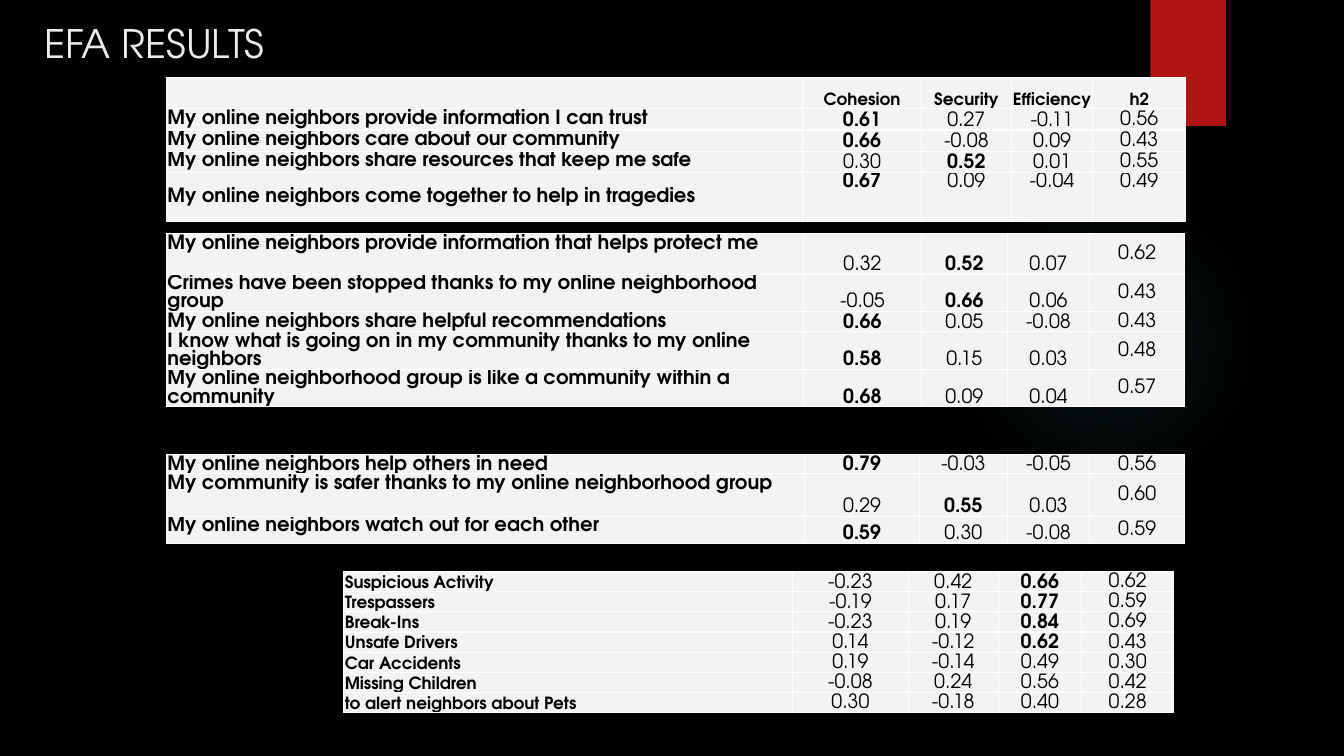
from lxml import etree
from pptx import Presentation
from pptx.dml.color import RGBColor
from pptx.enum.shapes import MSO_SHAPE
from pptx.enum.text import MSO_ANCHOR, PP_ALIGN
from pptx.oxml import parse_xml
from pptx.util import Inches, Pt

TOP, MIDDLE, BOTTOM = MSO_ANCHOR.TOP, MSO_ANCHOR.MIDDLE, MSO_ANCHOR.BOTTOM
LEFT, CENTER = PP_ALIGN.LEFT, PP_ALIGN.CENTER
BLACK = RGBColor(0x00, 0x00, 0x00)
WHITE = RGBColor(0xFF, 0xFF, 0xFF)
RED = RGBColor(0xB0, 0x15, 0x13)
TEAL = RGBColor(0x50, 0xB9, 0xC1)
CELL_GRAY = RGBColor(0xF3, 0xF3, 0xF3)
TITLE_GRAY = RGBColor(0xEB, 0xEB, 0xEB)
FONT = "TeX Gyre Adventor"
NAMESPACE = "http://schemas.openxmlformats.org/drawingml/2006/main"
LINE_HEIGHT = {12: 11, 14: 13}

TITLE = "EFA RESULTS"
FACTORS = ["Cohesion", "Security", "Efficiency", "h2"]
COHESION, SECURITY, EFFICIENCY, H2 = 1, 2, 3, 4

# fmt: off
TRUST_ITEMS = [
    ("My online neighbors provide information I can trust", "0.61 0.27 -0.11 0.56", COHESION),
    ("My online neighbors care about our community", "0.66 -0.08 0.09 0.43", COHESION),
    ("My online neighbors share resources that keep me safe", "0.30 0.52 0.01 0.55", SECURITY),
    ("My online neighbors come together to help in tragedies", "0.67 0.09 -0.04 0.49", COHESION),
]
COMMUNITY_ITEMS = [
    ("My online neighbors provide information that helps protect me", "0.32 0.52 0.07 0.62", SECURITY),
    ("Crimes have been stopped thanks to my online neighborhood group", "-0.05 0.66 0.06 0.43", SECURITY),
    ("My online neighbors share helpful recommendations", "0.66 0.05 -0.08 0.43", COHESION),
    ("I know what is going on in my community thanks to my online neighbors", "0.58 0.15 0.03 0.48", COHESION),
    ("My online neighborhood group is like a community within a community", "0.68 0.09 0.04 0.57", COHESION),
]
SUPPORT_ITEMS = [
    ("My online neighbors help others in need", "0.79 -0.03 -0.05 0.56", COHESION),
    ("My community is safer thanks to my online neighborhood group", "0.29 0.55 0.03 0.60", SECURITY),
    ("My online neighbors watch out for each other", "0.59 0.30 -0.08 0.59", COHESION),
]
ALERT_ITEMS = [
    ("Suspicious Activity", "-0.23 0.42 0.66 0.62", EFFICIENCY),
    ("Trespassers", "-0.19 0.17 0.77 0.59", EFFICIENCY),
    ("Break-Ins", "-0.23 0.19 0.84 0.69", EFFICIENCY),
    ("Unsafe Drivers", "0.14 -0.12 0.62 0.43", EFFICIENCY),
    ("Car Accidents", "0.19 -0.14 0.49 0.30", None),
    ("Missing Children", "-0.08 0.24 0.56 0.42", None),
    ("to alert neighbors about Pets", "0.30 -0.18 0.40 0.28", None),
]
# fmt: on

GROUPS = [
    dict(items=TRUST_ITEMS, header=True, left=1.65, top=0.77, label_size=14, label_anchor=TOP,
         columns=[6.31, 1.18, 0.89, 0.81, 0.92], rows=[0.2, 0.21, 0.21, 0.21, 0.49]),
    dict(items=COMMUNITY_ITEMS, header=False, left=1.65, top=2.32, label_size=14, label_anchor=TOP,
         columns=[6.32, 1.17, 0.85, 0.82, 0.94], rows=[0.4, 0.37, 0.2, 0.37, 0.37]),
    dict(items=SUPPORT_ITEMS, header=False, left=1.65, top=4.51, label_size=14, label_anchor=TOP,
         columns=[6.33, 1.14, 0.87, 0.82, 0.94], rows=[0.19, 0.42, 0.27]),
    dict(items=ALERT_ITEMS, header=False, left=3.41, top=5.67, label_size=12, label_anchor=BOTTOM,
         columns=[4.45, 1.15, 0.89, 0.83, 0.91], rows=[0.2] * 7),
]
TALL_ITEM = TRUST_ITEMS[-1][0]


def apply(target, values):
    for attribute, value in values.items():
        setattr(target, attribute, value)


def write(paragraph, text, size, color, bold=False):
    run = paragraph.add_run()
    run.text = text
    apply(run.font, dict(name=FONT, size=Pt(size), bold=bold))
    run.font.color.rgb = color


def add_backdrop(slide, preset, left, top, width, height, color):
    backdrop = slide.shapes.add_shape(
        preset, Inches(left), Inches(top), Inches(width), Inches(height))
    backdrop.shadow.inherit = False
    backdrop.fill.solid()
    backdrop.fill.fore_color.rgb = color
    backdrop.line.fill.background()
    return backdrop


def add_glow(slide):
    glow = add_backdrop(slide, MSO_SHAPE.OVAL, 9.41, 1.83, 3.08, 3.08, TEAL)
    stops = "".join(
        f'<a:gs pos="{place * 1000}"><a:srgbClr val="{TEAL}">'
        f'<a:alpha val="{alpha * 1000}"/></a:srgbClr></a:gs>'
        for place, alpha in [(0, 7), (36, 6), (69, 0), (100, 0)])
    gradient = parse_xml(
        f'<a:gradFill xmlns:a="{NAMESPACE}"><a:gsLst>{stops}</a:gsLst><a:path path="circle">'
        '<a:fillToRect l="50000" t="50000" r="50000" b="50000"/></a:path></a:gradFill>')
    properties = glow.fill._xPr
    properties.replace(properties.find(f"{{{NAMESPACE}}}solidFill"), gradient)


def add_borders(cell):
    properties = cell._tc.get_or_add_tcPr()
    for place, side in enumerate(["lnL", "lnR", "lnT", "lnB"]):
        border = etree.fromstring(
            f'<a:{side} xmlns:a="{NAMESPACE}" w="12700"><a:solidFill>'
            f'<a:srgbClr val="{WHITE}"/></a:solidFill></a:{side}>')
        properties.insert(place, border)


def fill_cell(cell, text, size, bold, anchor, alignment):
    apply(cell, dict(margin_left=Inches(0.01), margin_right=Inches(0.01),
                     margin_top=Inches(0.01), margin_bottom=0, vertical_anchor=anchor))
    cell.fill.solid()
    cell.fill.fore_color.rgb = CELL_GRAY
    add_borders(cell)
    paragraph = cell.text_frame.paragraphs[0]
    apply(paragraph, dict(alignment=alignment, line_spacing=Pt(LINE_HEIGHT[size])))
    if text:
        write(paragraph, text, size, BLACK, bold)


def add_group(slide, group):
    columns, rows = group["columns"], group["rows"]
    loadings = slide.shapes.add_table(
        len(rows), len(columns), Inches(group["left"]), Inches(group["top"]),
        Inches(sum(columns)), Inches(sum(rows))).table
    apply(loadings, dict(first_row=False, horz_banding=False))
    for column, width in zip(loadings.columns, columns):
        column.width = Inches(width)
    for row, height in zip(loadings.rows, rows):
        row.height = Inches(height)
    if group["header"]:
        for column, heading in enumerate([""] + FACTORS):
            fill_cell(loadings.cell(0, column), heading, 12, True, BOTTOM, CENTER)
    for row, (label, values, main_factor) in enumerate(group["items"], int(group["header"])):
        tall = label == TALL_ITEM
        fill_cell(loadings.cell(row, 0), label, group["label_size"], True,
                  MIDDLE if tall else group["label_anchor"], LEFT)
        for column, value in enumerate(values.split(), 1):
            anchor = TOP if tall else MIDDLE if column == H2 else BOTTOM
            fill_cell(loadings.cell(row, column), value, 14, column == main_factor, anchor, CENTER)


def main():
    deck = Presentation()
    apply(deck, dict(slide_width=Inches(13.33), slide_height=Inches(7.5)))
    slide = deck.slides.add_slide(deck.slide_layouts[6])
    slide.background.fill.solid()
    slide.background.fill.fore_color.rgb = BLACK
    add_glow(slide)
    add_backdrop(slide, MSO_SHAPE.RECTANGLE, 11.41, 0, 0.75, 1.25, RED)
    title = slide.shapes.add_textbox(Inches(0.34), Inches(0.14), Inches(9.33), Inches(0.49))
    apply(title.text_frame, dict(word_wrap=True, vertical_anchor=TOP))
    write(title.text_frame.paragraphs[0], TITLE, 28, TITLE_GRAY)
    for group in GROUPS:
        add_group(slide, group)
    deck.save("out.pptx")


if __name__ == "__main__":
    main()
